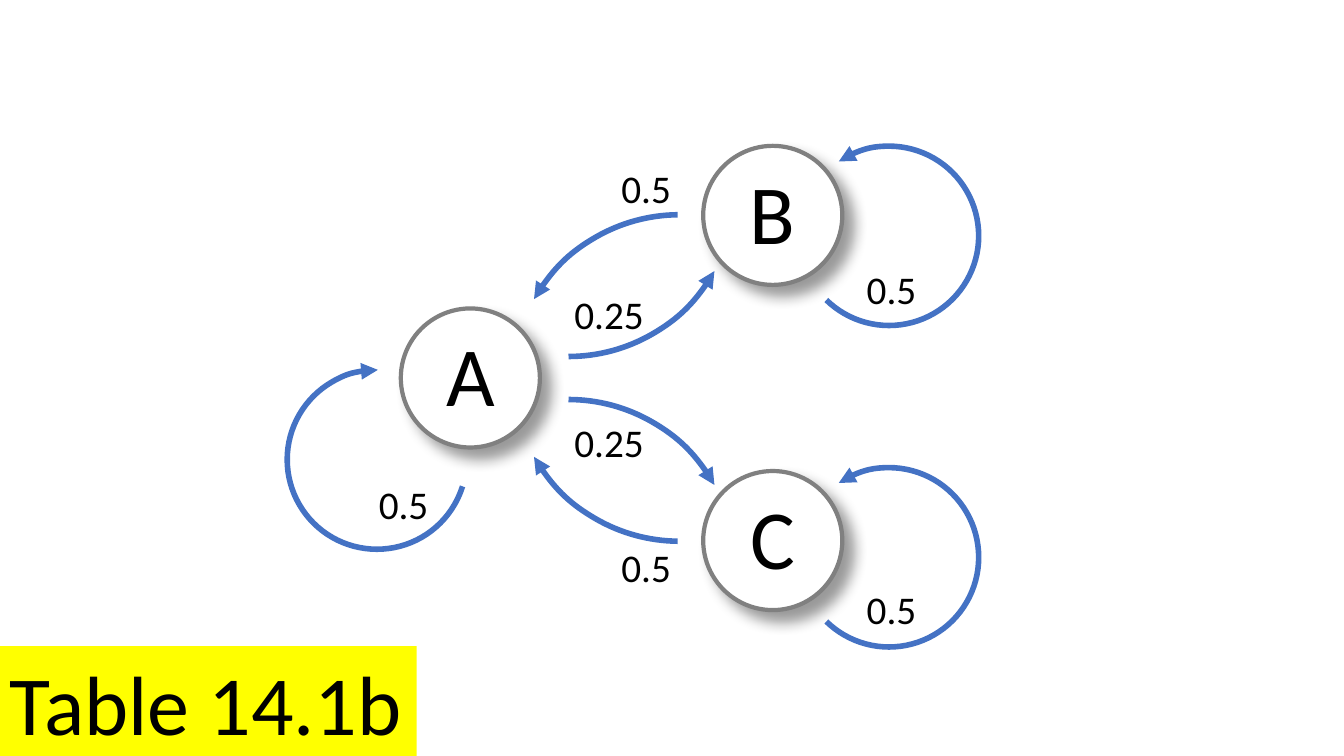
import pptx
import pptx.dml.color
import pptx.enum.shapes
import pptx.enum.text
import pptx.oxml
import pptx.oxml.ns
import pptx.util

KIND = pptx.enum.shapes.MSO_SHAPE
ALIGN = pptx.enum.text.PP_ALIGN
FIT = pptx.enum.text.MSO_AUTO_SIZE.SHAPE_TO_FIT_TEXT
NS = pptx.oxml.ns.nsdecls("a")
WIDE, HIGH = 13.33, 7.5
COLS = 40
CELL = WIDE / COLS  # square grid cell, in inches

GLOW = (f'<a:effectLst {NS}><a:outerShdw blurRad="127000" dist="127000" dir="2700000" '
        'algn="tl" rotWithShape="0"><a:srgbClr val="000000"><a:alpha val="40000"/>'
        '</a:srgbClr></a:outerShdw></a:effectLst>')


def color(code):
    return pptx.dml.color.RGBColor.from_string(code)


def frame(box, x, y, wide, high):
    """Lengths of a part centred at column x, row y of the box."""
    left, top = box
    cells = (left + x - wide / 2, top + y - high / 2, wide, high)
    return [pptx.util.Inches(n * CELL) for n in cells]


def write(shape, text, size, align=ALIGN.LEFT, wrap=False):
    body = shape.text_frame
    body.text = text
    body.word_wrap = wrap
    body.auto_size = FIT
    body.vertical_anchor = pptx.enum.text.MSO_ANCHOR.TOP
    line = body.paragraphs[0]
    line.alignment = align
    font = line.runs[0].font
    font.name = "Calibri"
    font.size = pptx.util.Pt(size)
    font.color.rgb = color("000000")


def node(slide, box, name, x, y):
    disc = slide.shapes.add_shape(KIND.OVAL, *frame(box, x, y, 4.14, 4.14))
    disc.fill.solid()
    disc.fill.fore_color.rgb = color("FFFFFF")
    disc.line.color.rgb = color("808080")
    disc.line.width = pptx.util.Pt(3)
    disc.element.spPr.append(pptx.oxml.parse_xml(GLOW))
    text = slide.shapes.add_textbox(*frame(box, x, y - 0.13, 3.39, 3.33))
    write(text, name, 60, ALIGN.CENTER, True)


def arrow(slide, box, x, y, side, span, flip=None):
    arc = slide.shapes.add_shape(KIND.ARC, *frame(box, x, y, side, side))
    arc.adjustments[0], arc.adjustments[1] = span
    arc.shadow.inherit = False
    arc.fill.background()
    arc.line.color.rgb = color("4472C4")
    arc.line.width = pptx.util.Pt(4)
    if flip:
        arc.element.spPr.find(pptx.oxml.ns.qn("a:xfrm")).set(flip, "1")
    edge = arc.element.spPr.find(pptx.oxml.ns.qn("a:ln"))
    edge.append(pptx.oxml.parse_xml(f'<a:tailEnd {NS} type="triangle"/>'))


def label(slide, box, text, x, y):
    wide = 2.1 if len(text) == 3 else 2.7
    write(slide.shapes.add_textbox(*frame(box, x, y, wide, 1.71)), text, 28)


def chain(slide, box):
    """State diagram; the box starts at the left end of A's middle row."""
    # States
    for name, x, y in (("A", 14, 0), ("B", 23, -4.84), ("C", 23, 4.84)):
        node(slide, box, name, x, y)

    # Moves between A and B (above) and A and C (below)
    go, back = (162, 198.42), (54.358, 90.176)
    for sign, flip in ((1, None), (-1, "flipV")):
        arrow(slide, box, 16.92, sign * 5.62, 9.96, go, flip)
        arrow(slide, box, 20.22, sign * -0.12, 9.96, back, flip)
        label(slide, box, "0.25", 18.15, sign * 1.9)
        label(slide, box, "0.5", 19.25, sign * 5.64)

    # Loops, each with its label
    stay = (27.427, 182.423)
    loops = (
        (11.22, 2.43, (10.422, 162.37), None, 12.03, 3.74),
        (26.46, -4.23, stay, "flipH", 26.55, -2.66),
        (26.46, 5.34, stay, "flipH", 26.55, 6.88),
    )
    for x, y, span, flip, tag_x, tag_y in loops:
        arrow(slide, box, x, y, 5.34, span, flip)
        label(slide, box, "0.5", tag_x, tag_y)


def banner(slide, box, text):
    wide, high = 12.4, 3.33
    tag = slide.shapes.add_shape(
        KIND.RECTANGLE, *frame(box, wide / 2, -high / 2, wide, high))
    tag.shadow.inherit = False
    tag.fill.solid()
    tag.fill.fore_color.rgb = color("FFFF00")
    tag.line.fill.background()
    write(tag, text, 60)


def main():
    deck = pptx.Presentation()
    deck.slide_width = pptx.util.Inches(WIDE)
    deck.slide_height = pptx.util.Inches(HIGH)
    slide = deck.slides.add_slide(deck.slide_layouts[6])
    rows = HIGH / CELL
    chain(slide, (0, rows / 2))
    banner(slide, (0, rows + 0.06), "Table 14.1b")
    deck.save("out.pptx")


if __name__ == "__main__":
    main()
